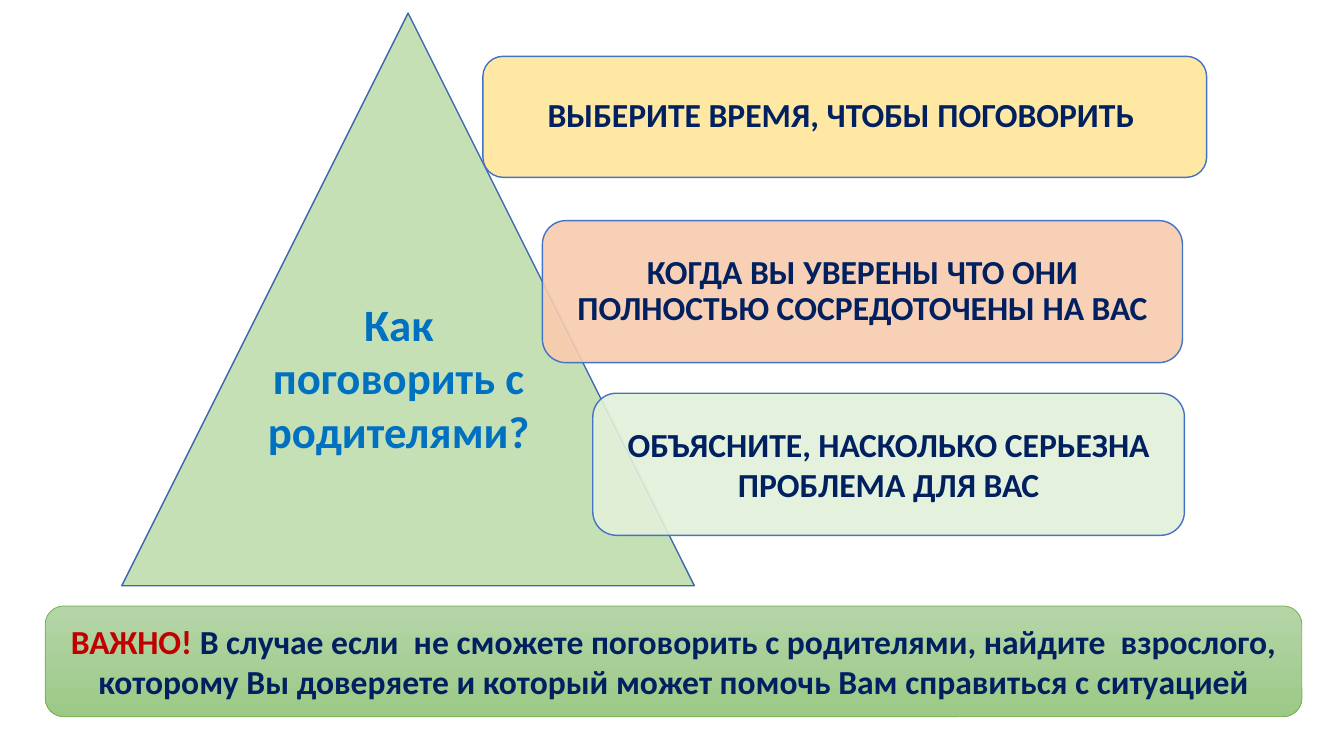
from dataclasses import dataclass

from lxml import etree
from pptx import Presentation
from pptx import util as u
from pptx.dml.color import RGBColor
from pptx.enum import shapes, text
from pptx.oxml import ns


@dataclass(frozen=True)
class Theme:
    """Colours, font and type sizes of the slide."""
    font: str = "Calibri"
    title_size: int = 32
    body_size: int = 24
    title: str = "0070C0"
    body: str = "002060"
    alert: str = "C00000"
    triangle: str = "C5E0B4"
    triangle_line: str = "3E67B2"
    card_line: str = "4472C4"
    card_fills: tuple = ("FFE699", "F8CBAD", "E2F0D9")
    card_opacity: int = 90
    banner: tuple = ("B5D5A7", "9CC987")
    banner_line: str = "70AD47"


class SlideBuilder:
    """Draws styled elements on the current slide."""

    def __init__(self, slide, theme):
        """Keep the slide and its theme."""
        self.slide = slide
        self.theme = theme

    def shape(self, kind, box, line, width=1):
        """Add an outlined preset shape without a shadow."""
        shape = self.slide.shapes.add_shape(kind, *map(u.Cm, box))
        shape.shadow.inherit = False
        shape.line.color.rgb = RGBColor.from_string(line)
        shape.line.width = u.Pt(width)
        return shape

    def fill(self, shape, color, opacity=100):
        """Fill a shape with a solid colour of the given opacity."""
        shape.fill.solid()
        shape.fill.fore_color.rgb = RGBColor.from_string(color)
        if opacity < 100:
            solid = shape.element.spPr.find(ns.qn("a:solidFill"))
            etree.SubElement(solid[0], ns.qn("a:alpha"), val=str(opacity * 1000))

    def add_words(self, shape, runs, size, anchor=text.MSO_ANCHOR.MIDDLE, spacing=1.0):
        """Set one centred bold paragraph from (words, colour) runs."""
        frame = shape.text_frame
        frame.word_wrap = True
        frame.vertical_anchor = anchor
        paragraph = frame.paragraphs[0]
        paragraph.alignment = text.PP_ALIGN.CENTER
        paragraph.line_spacing = spacing
        for words, color in runs:
            run = paragraph.add_run()
            run.text = words
            run.font.name = self.theme.font
            run.font.size = u.Pt(size)
            run.font.bold = True
            run.font.color.rgb = RGBColor.from_string(color)

    def triangle(self, box):
        """Add the large background triangle."""
        shape = self.shape(shapes.MSO_SHAPE.ISOSCELES_TRIANGLE, box, self.theme.triangle_line)
        self.fill(shape, self.theme.triangle)

    def title(self, box, words):
        """Add the question on the triangle."""
        shape = self.slide.shapes.add_textbox(*map(u.Cm, box))
        self.add_words(shape, [(words, self.theme.title)], self.theme.title_size,
                       text.MSO_ANCHOR.TOP)

    def card(self, box, words, color, spacing):
        """Add a translucent rounded card with one piece of advice."""
        shape = self.shape(shapes.MSO_SHAPE.ROUNDED_RECTANGLE, box, self.theme.card_line)
        self.fill(shape, color, self.theme.card_opacity)
        self.add_words(shape, [(words, self.theme.body)], self.theme.body_size, spacing=spacing)

    def banner(self, box, warning, words):
        """Add the gradient banner with a highlighted opening word."""
        shape = self.shape(shapes.MSO_SHAPE.ROUNDED_RECTANGLE, box, self.theme.banner_line, 0.5)
        shape.fill.gradient()
        shape.fill.gradient_angle = 270
        for stop, color in zip(shape.fill.gradient_stops, self.theme.banner):
            stop.color.rgb = RGBColor.from_string(color)
        self.add_words(shape, [(warning, self.theme.alert), (words, self.theme.body)],
                       self.theme.body_size)


def main():
    """Build and save the slide."""
    presentation = Presentation()
    presentation.slide_width = u.Cm(33.87)
    presentation.slide_height = u.Cm(19.05)
    slide = presentation.slides.add_slide(presentation.slide_layouts[6])
    theme = Theme()
    builder = SlideBuilder(slide, theme)

    builder.triangle((3.07, 0.33, 14.43, 14.43))
    cards = [
        ((12.17, 1.42, 18.24, 3.05), "ВЫБЕРИТЕ ВРЕМЯ, ЧТОБЫ ПОГОВОРИТЬ ", 0.9),
        ((13.67, 5.56, 16.13, 3.58),
         "КОГДА ВЫ УВЕРЕНЫ ЧТО ОНИ ПОЛНОСТЬЮ СОСРЕДОТОЧЕНЫ НА ВАС", 0.9),
        ((14.94, 9.91, 14.91, 3.58), "ОБЪЯСНИТЕ, НАСКОЛЬКО СЕРЬЕЗНА ПРОБЛЕМА ДЛЯ ВАС", 1.0),
    ]
    for (box, words, spacing), color in zip(cards, theme.card_fills):
        builder.card(box, words, color, spacing)
    builder.title((6.43, 7.34, 7.24, 4.37), "Как поговорить с родителями?")
    builder.banner(
        (1.14, 15.27, 31.67, 2.79), "ВАЖНО! ",
        "В случае если  не сможете поговорить с родителями, найдите  взрослого, "
        "которому Вы доверяете и который может помочь Вам справиться с ситуацией")
    presentation.save("out.pptx")


if __name__ == "__main__":
    main()
